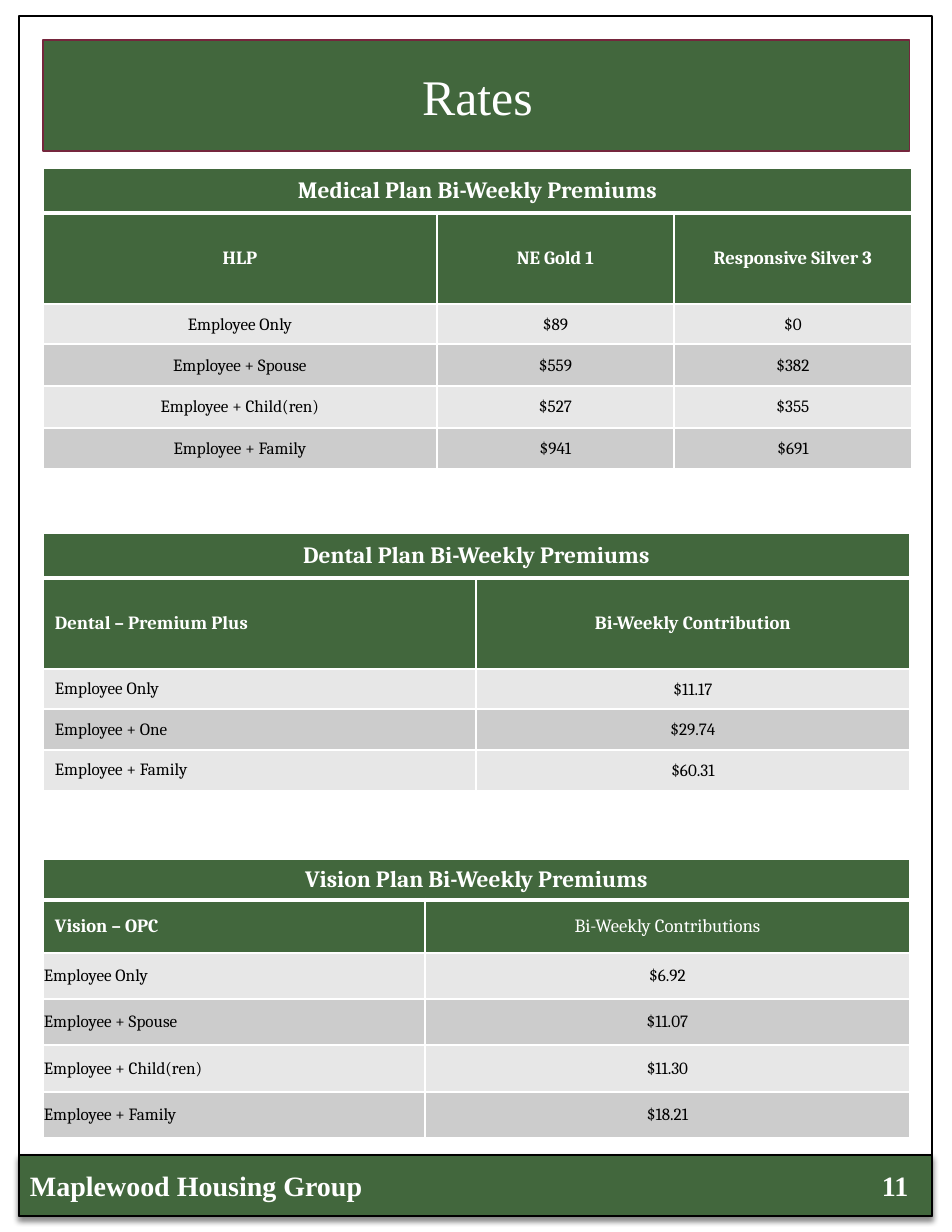
from dataclasses import dataclass
from typing import Optional

import pptx
import pptx.dml.color
import pptx.enum.shapes
import pptx.enum.text
import pptx.oxml
import pptx.oxml.ns
import pptx.util

ALIGN = pptx.enum.text.PP_ALIGN
ANCHOR = pptx.enum.text.MSO_ANCHOR
PIXELS_PER_INCH = 112
WIDE_INSETS = (12, 6, 12, 6)
TIGHT_INSETS = (1, 1, 1, 0)


@dataclass(frozen=True)
class Theme:
    green: str = "42673D"
    maroon: str = "75263D"
    white: str = "FFFFFF"
    black: str = "000000"
    bands: tuple = ("E7E7E7", "CCCCCC")
    serif: str = "Times New Roman"
    table_font: str = "Cambria"
    title_size: int = 32
    footer_size: int = 18
    heading_size: int = 15
    column_size: int = 12
    body_size: int = 11


THEME = Theme()


@dataclass(frozen=True)
class Box:
    left: int
    top: int
    width: int
    height: int


@dataclass(frozen=True)
class TextStyle:
    size: int
    color: str = THEME.white
    font: str = THEME.table_font
    bold: bool = False
    align: ALIGN = ALIGN.LEFT


@dataclass(frozen=True)
class RateTable:
    title: str
    top: int
    columns: tuple
    row_heights: tuple
    headers: tuple
    rates: tuple
    label_align: ALIGN = ALIGN.LEFT
    label_insets: tuple = TIGHT_INSETS
    contribution_bold: bool = True


RATE_TABLES = (
    RateTable(
        "Dental Plan Bi-Weekly Premiums", 533, (433, 434), (45, 91, 40, 41, 41),
        ("Dental – Premium Plus", "Bi-Weekly Contribution"),
        (("Employee Only", "$11.17"), ("Employee + One", "$29.74"),
         ("Employee + Family", "$60.31")),
        label_insets=WIDE_INSETS),
    RateTable(
        "Vision Plan Bi-Weekly Premiums", 859, (382, 485), (41, 53, 46, 46, 47, 46),
        ("Vision – OPC", "Bi-Weekly Contributions"),
        (("Employee Only", "$6.92"), ("Employee + Spouse", "$11.07"),
         ("Employee + Child(ren)", "$11.30"), ("Employee + Family", "$18.21")),
        contribution_bold=False),
    RateTable(
        "Medical Plan Bi-Weekly Premiums", 168, (394, 237, 238), (45, 91, 40, 42, 42, 41),
        ("HLP", "NE Gold 1", "Responsive Silver 3"),
        (("Employee Only", "$89", "$0"), ("Employee + Spouse", "$559", "$382"),
         ("Employee + Child(ren)", "$527", "$355"), ("Employee + Family", "$941", "$691")),
        label_align=ALIGN.CENTER),
)


def px(length: int) -> int:
    return round(length * 914400 / PIXELS_PER_INCH)


def rgb(color: str):
    return pptx.dml.color.RGBColor.from_string(color)


def place(box: Box) -> tuple:
    return px(box.left), px(box.top), px(box.width), px(box.height)


def set_values(target, values: dict) -> None:
    for name, value in values.items():
        setattr(target, name, value)


def set_margins(target, insets: tuple) -> None:
    sides = ("left", "top", "right", "bottom")
    set_values(target, {f"margin_{side}": px(inset) for side, inset in zip(sides, insets)})


def write(text_frame, text: str, style: TextStyle):
    paragraph = text_frame.paragraphs[0]
    paragraph.alignment = style.align
    run = paragraph.add_run()
    run.text = text
    set_values(run.font, {"size": pptx.util.Pt(style.size), "name": style.font,
                          "bold": style.bold})
    run.font.color.rgb = rgb(style.color)
    return paragraph


def add_rectangle(slide, box: Box, fill: Optional[str], line: str, weight: float):
    shape = slide.shapes.add_shape(pptx.enum.shapes.MSO_SHAPE.RECTANGLE, *place(box))
    shape.shadow.inherit = False
    if fill:
        shape.fill.solid()
        shape.fill.fore_color.rgb = rgb(fill)
    else:
        shape.fill.background()
    shape.line.color.rgb = rgb(line)
    shape.line.width = pptx.util.Pt(weight)
    return shape


def add_drop_shadow(shape) -> None:
    effects = shape._element.spPr.find(pptx.oxml.ns.qn("a:effectLst"))
    effects.append(pptx.oxml.parse_xml(
        f'<a:outerShdw {pptx.oxml.ns.nsdecls("a")} blurRad="50800" dist="31750" dir="5400000" '
        f'rotWithShape="0"><a:srgbClr val="{THEME.black}"><a:alpha val="47000"/></a:srgbClr>'
        '</a:outerShdw>'))


def add_text(slide, box: Box, text: str, style: TextStyle, insets: tuple = (11, 6, 11, 6)):
    text_frame = slide.shapes.add_textbox(*place(box)).text_frame
    text_frame.word_wrap = True
    set_margins(text_frame, insets)
    return write(text_frame, text, style)


def style_cell(cell, fill: str, insets: tuple, top: int = 1, bottom: int = 1) -> None:
    cell.fill.solid()
    cell.fill.fore_color.rgb = rgb(fill)
    cell.vertical_anchor = ANCHOR.MIDDLE
    set_margins(cell, insets)
    properties = cell._tc.get_or_add_tcPr()
    for index, (side, weight) in enumerate((("L", 1), ("R", 1), ("T", top), ("B", bottom))):
        properties.insert(index, pptx.oxml.parse_xml(
            f'<a:ln{side} {pptx.oxml.ns.nsdecls("a")} w="{pptx.util.Pt(weight)}"><a:solidFill>'
            f'<a:srgbClr val="{THEME.white}"/></a:solidFill></a:ln{side}>'))


def add_rate_table(slide, plan: RateTable) -> None:
    box = Box(43, plan.top, sum(plan.columns), sum(plan.row_heights))
    table = slide.shapes.add_table(
        len(plan.row_heights), len(plan.columns), *place(box)).table
    set_values(table, {"first_row": False, "horz_banding": False})
    for column, width in zip(table.columns, plan.columns):
        column.width = px(width)
    for row, height in zip(table.rows, plan.row_heights):
        row.height = px(height)

    # Heading across all columns
    table.cell(0, 0).merge(table.cell(0, len(plan.columns) - 1))
    for index in range(len(plan.columns)):
        style_cell(table.cell(0, index), THEME.green, WIDE_INSETS, bottom=3)
    write(table.cell(0, 0).text_frame, plan.title,
          TextStyle(THEME.heading_size, bold=True, align=ALIGN.CENTER))

    # Column headers, then the banded rates
    for index, header in enumerate(plan.headers):
        cell = table.cell(1, index)
        style_cell(cell, THEME.green, WIDE_INSETS, top=3)
        write(cell.text_frame, header, TextStyle(
            THEME.column_size, bold=index == 0 or plan.contribution_bold,
            align=ALIGN.CENTER if index else plan.label_align))
    for row_index, values in enumerate(plan.rates):
        for index, value in enumerate(values):
            cell = table.cell(row_index + 2, index)
            style_cell(cell, THEME.bands[row_index % 2],
                       TIGHT_INSETS if index else plan.label_insets)
            write(cell.text_frame, value, TextStyle(
                THEME.body_size, THEME.black,
                align=ALIGN.CENTER if index else plan.label_align))


def main() -> None:
    presentation = pptx.Presentation()
    set_values(presentation, {"slide_width": px(952), "slide_height": px(1232)})
    slide = presentation.slides.add_slide(presentation.slide_layouts[6])

    # Page frame and footer
    add_rectangle(slide, Box(19, 16, 913, 1200), None, THEME.black, 1)
    footer = add_rectangle(slide, Box(19, 1155, 913, 61), THEME.green, THEME.black, 1)
    add_drop_shadow(footer)
    footer_style = TextStyle(THEME.footer_size, font=THEME.serif, bold=True)
    add_text(slide, Box(871, 1163, 81, 45), "11", footer_style)
    add_text(slide, Box(19, 1163, 744, 45), "Maplewood Housing Group", footer_style)

    # Title banner
    add_rectangle(slide, Box(43, 40, 867, 111), THEME.green, THEME.maroon, 0.75)
    title = add_text(slide, Box(43, 63, 869, 66), "Rates", TextStyle(
        THEME.title_size, font=THEME.serif, align=ALIGN.CENTER), (0, 9, 0, 0))
    title.line_spacing = 0.9

    # Premium tables
    for plan in RATE_TABLES:
        add_rate_table(slide, plan)

    presentation.save("out.pptx")


if __name__ == "__main__":
    main()
